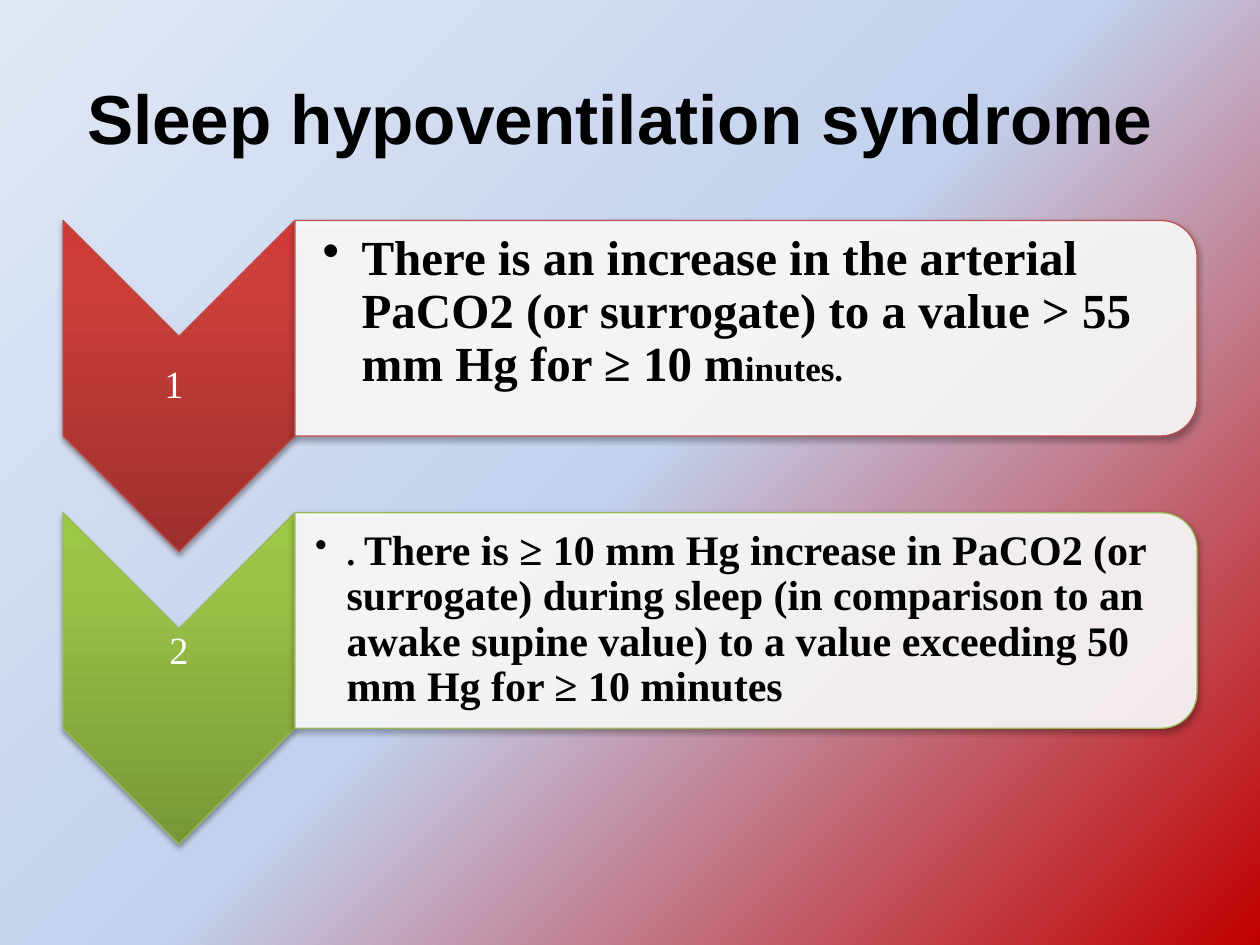
from lxml import etree
from pptx import Presentation
from pptx.dml import color
from pptx.enum import shapes, text
from pptx.oxml import ns, parse_xml
from pptx.util import Inches, Pt

SERIF = "Times New Roman"
LEFT, ARROW_WIDTH, ARROW_HEIGHT = 0.5, 1.84, 2.63
PANEL_WIDTH, PANEL_HEIGHT = 7.16, 1.71
FIRST_TOP, STEP_GAP = 1.75, 2.32
TOP, MIDDLE = text.MSO_ANCHOR.TOP, text.MSO_ANCHOR.MIDDLE

STEPS = [
    dict(
        number="1 ", number_anchor=MIDDLE, line="C0504D",
        stops=[(0, "9C2F2D"), (80, "CB3E3A"), (100, "CE3B37")],
        runs=[("There is an increase in the arterial PaCO2 (or surrogate) "
               "to a value > 55 mm Hg for ≥ 10 m", 28), ("inutes.", 20)],
        anchor=TOP, inset=0.22, indent=0.31,
    ),
    dict(
        number="2", number_anchor=TOP, line="9BBB59",
        stops=[(0, "779737"), (80, "9BC348"), (100, "9DC746")],
        runs=[(". ", 20),
              ("There is ≥ 10 mm Hg increase in PaCO2 (or surrogate) during "
               "sleep (in comparison to an awake supine value) to a value "
               "exceeding 50 mm Hg for ≥ 10 minutes", 24)],
        anchor=MIDDLE, inset=0.16, indent=0.25,
    ),
]


def rgb(value):
    return color.RGBColor.from_string(value)


def set_gradient(fill, holder, stops, direction):
    fill.gradient()
    gradient = next(holder.iter(ns.qn("a:gradFill")))
    stop_xml = "".join(
        f'<a:gs pos="{position * 1000}"><a:srgbClr val="{value}"/></a:gs>'
        for position, value in stops)
    gradient.getparent().replace(gradient, parse_xml(
        f'<a:gradFill {ns.nsdecls("a")} rotWithShape="0">'
        f"<a:gsLst>{stop_xml}</a:gsLst>{direction}</a:gradFill>"))


def add_shadow(shape):
    shape.shadow.inherit = False
    effects = shape.element.spPr.find(ns.qn("a:effectLst"))
    effects.append(parse_xml(
        f'<a:outerShdw {ns.nsdecls("a")} blurRad="40000" dist="23000" '
        'dir="5400000" rotWithShape="0"><a:srgbClr val="000000">'
        '<a:alpha val="35000"/></a:srgbClr></a:outerShdw>'))


def add_turned_shape(slide, kind, left, top, width, height, line):
    shape = slide.shapes.add_shape(
        kind, Inches(left + (width - height) / 2),
        Inches(top + (height - width) / 2), Inches(height), Inches(width))
    shape.rotation = 90
    shape.line.color.rgb = rgb(line)
    shape.line.width = Pt(0.75)
    add_shadow(shape)
    return shape


def add_run(paragraph, words, size, font, value, bold=False):
    run = paragraph.add_run()
    run.text = words
    run.font.size = Pt(size)
    run.font.name = font
    run.font.bold = bold
    run.font.color.rgb = rgb(value)


def add_label(slide, left, top, width, height, anchor, inset=0.02):
    frame = slide.shapes.add_textbox(
        Inches(left), Inches(top), Inches(width), Inches(height)).text_frame
    frame.word_wrap = True
    frame.vertical_anchor = anchor
    frame.margin_left = Inches(inset)
    frame.margin_right = frame.margin_top = frame.margin_bottom = Inches(0.02)
    paragraph = frame.paragraphs[0]
    paragraph.line_spacing = 0.9
    return paragraph


def add_bullet(paragraph, indent):
    properties = paragraph._p.get_or_add_pPr()
    properties.set("marL", str(Inches(indent)))
    properties.set("indent", str(-Inches(indent)))
    etree.SubElement(properties, ns.qn("a:buChar"), char="•")


def add_title(slide, words):
    title = slide.shapes.title
    title.left, title.top = Inches(0.5), Inches(0.3)
    title.width, title.height = Inches(9), Inches(1.25)
    title.text_frame.vertical_anchor = MIDDLE
    paragraph = title.text_frame.paragraphs[0]
    paragraph.alignment = text.PP_ALIGN.CENTER
    add_run(paragraph, words, 39.6, "Arial", "000000", True)


def add_step(slide, top, step):
    arrow = add_turned_shape(slide, shapes.MSO_SHAPE.CHEVRON, LEFT, top,
                             ARROW_WIDTH, ARROW_HEIGHT, step["line"])
    set_gradient(arrow.fill, arrow.element, step["stops"],
                 '<a:lin ang="16200000" scaled="0"/>')
    number = add_label(slide, LEFT, top + ARROW_WIDTH / 2, ARROW_WIDTH,
                       ARROW_HEIGHT - ARROW_WIDTH, step["number_anchor"])
    number.alignment = text.PP_ALIGN.CENTER
    add_run(number, step["number"], 22, SERIF, "FFFFFF")

    panel_left = LEFT + ARROW_WIDTH
    panel = add_turned_shape(
        slide, shapes.MSO_SHAPE.ROUND_2_SAME_RECTANGLE, panel_left, top,
        PANEL_WIDTH, PANEL_HEIGHT, step["line"])
    panel.fill.solid()
    panel.fill.fore_color.rgb = rgb("FFFFFF")
    white = next(panel.element.spPr.iter(ns.qn("a:srgbClr")))
    etree.SubElement(white, ns.qn("a:alpha"), val="90000")

    criterion = add_label(slide, panel_left, top + 0.08, PANEL_WIDTH - 0.08,
                          1.54, step["anchor"], step["inset"])
    add_bullet(criterion, step["indent"])
    for words, size in step["runs"]:
        add_run(criterion, words, size, SERIF, "000000", True)


def main():
    deck = Presentation()
    deck.slide_width, deck.slide_height = Inches(10), Inches(7.5)
    slide = deck.slides.add_slide(deck.slide_layouts[5])
    set_gradient(
        slide.background.fill, slide.element,
        [(0, "C00000"), (50, "C2D1ED"), (100, "E1E8F5")],
        '<a:path path="circle"><a:fillToRect l="100000" t="100000"/></a:path>')
    add_title(slide, "Sleep hypoventilation syndrome ")
    for index, step in enumerate(STEPS):
        add_step(slide, FIRST_TOP + index * STEP_GAP, step)
    deck.save("out.pptx")


if __name__ == "__main__":
    main()
